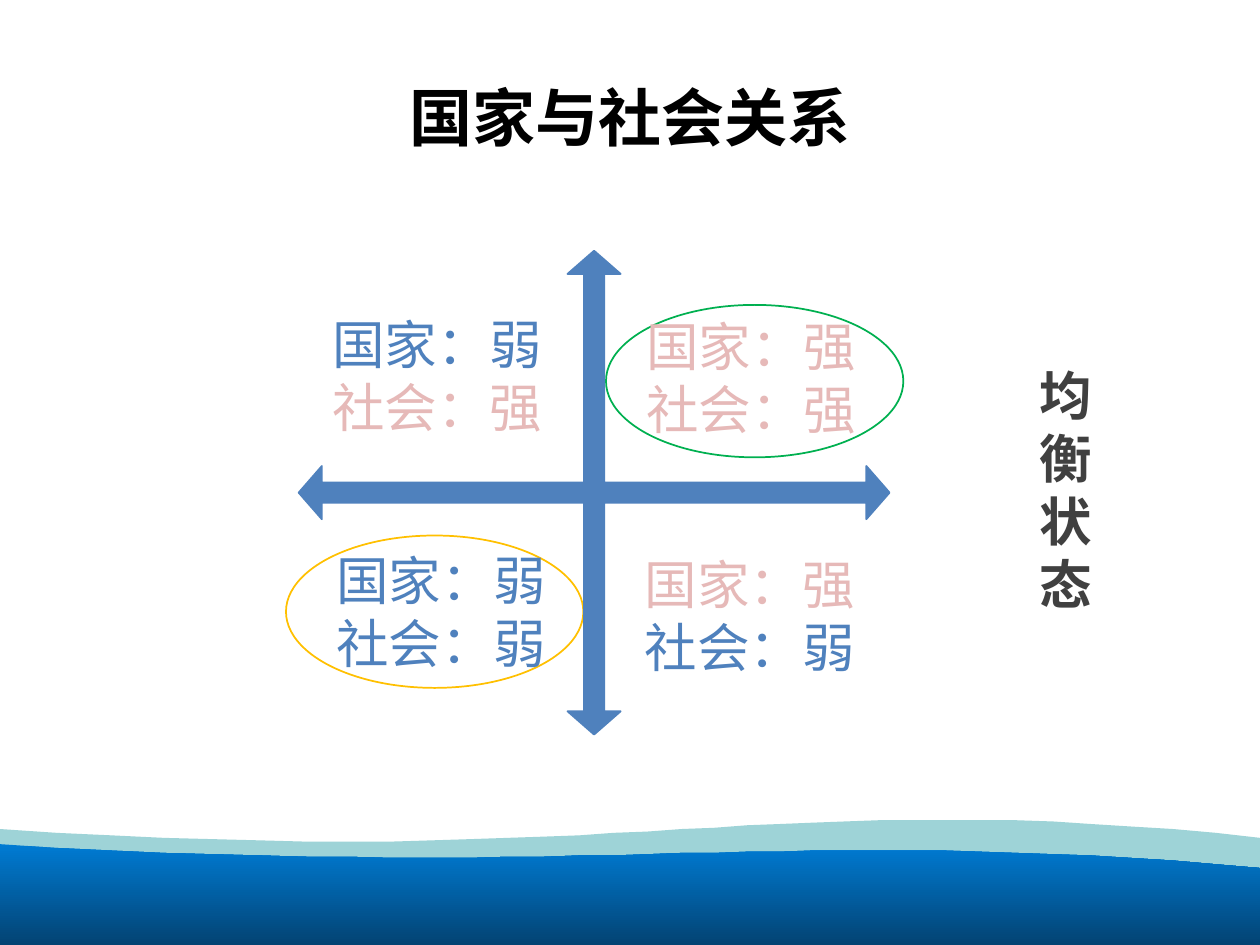
from lxml.etree import SubElement
from pptx import Presentation
from pptx.dml.color import RGBColor
from pptx.enum.shapes import MSO_SHAPE as Preset
from pptx.enum.text import MSO_ANCHOR as Anchor, PP_ALIGN as Align
from pptx.oxml.ns import qn
from pptx.util import Inches, Pt

FONT = "Noto Sans CJK SC"
COLORS = {
    "black": "000000", "white": "FFFFFF", "grey": "404040",
    "weak": "4F81BD", "strong": "E6B9B8",
    "green": "00B050", "amber": "FFC000",
    "wave": "9ED3D7", "sea_top": "007BD3", "sea_bottom": "034373",
}

TITLE = "国家与社会关系"
SIDE_LABEL = "均衡状态"
ACTORS = ("国家", "社会")
LEVELS = {"弱": "weak", "强": "strong"}
QUADRANTS = [  # left, top, level of each actor
    (5.02, 4.33, "强弱"),
    (5.03, 2.44, "强强"),
    (2.57, 4.30, "弱弱"),
    (2.54, 2.43, "弱强"),
]
ELLIPSES = [(4.81, 2.42, "green"), (2.27, 4.25, "amber")]
ARROW_ADJUSTMENTS = (0.042, 0.055, 0.048)

WAVE_X = [0, 0.45, 0.88, 1.3, 1.69, 2.07, 2.43, 2.77, 3.1, 3.42, 3.73,
          4.03, 4.32, 4.6, 4.87, 5.14, 5.41, 5.67, 5.93, 6.19, 6.44, 6.7,
          6.97, 7.23, 7.5, 7.78, 8.07, 8.36, 8.66, 8.98, 9.31, 9.65, 10]
BACK_WAVE_Y = [6.58, 6.61, 6.63, 6.65, 6.66, 6.67, 6.68, 6.68, 6.68, 6.67, 6.66,
               6.65, 6.64, 6.63, 6.61, 6.6, 6.58, 6.57, 6.55, 6.54, 6.53, 6.52,
               6.51, 6.51, 6.51, 6.51, 6.51, 6.52, 6.54, 6.56, 6.58, 6.61, 6.65]
FRONT_WAVE_Y = [6.7, 6.73, 6.75, 6.77, 6.78, 6.79, 6.8, 6.8, 6.81, 6.81, 6.81,
                6.8, 6.8, 6.79, 6.79, 6.78, 6.77, 6.77, 6.76, 6.76, 6.75, 6.75,
                6.75, 6.75, 6.75, 6.76, 6.77, 6.78, 6.79, 6.81, 6.83, 6.86, 6.89]


def rgb(name):
    return RGBColor.from_string(COLORS[name])


def add_wave(slide, crest, bottom):
    points = list(zip(WAVE_X, crest)) + [(WAVE_X[-1], bottom), (0, bottom)]
    (start_x, start_y), *rest = [(Inches(x), Inches(y)) for x, y in points]
    builder = slide.shapes.build_freeform(start_x, start_y)
    builder.add_line_segments(rest, close=True)
    shape = builder.convert_to_shape()
    shape.shadow.inherit = False
    shape.line.fill.background()
    return shape


def add_preset(slide, preset, box, fill, line):
    shape = slide.shapes.add_shape(preset, *map(Inches, box))
    shape.shadow.inherit = False
    shape.fill.solid()
    shape.fill.fore_color.rgb = rgb(fill)
    shape.line.color.rgb = rgb(line)
    shape.line.width = Pt(1)
    return shape


def add_text(slide, box, lines, size, bold=False, wrap=True):
    """Add a text box; lines holds (text, colour name) pairs."""
    frame = slide.shapes.add_textbox(*map(Inches, box)).text_frame
    frame.word_wrap = wrap
    for index, (text, color) in enumerate(lines):
        paragraph = frame.add_paragraph() if index else frame.paragraphs[0]
        paragraph.text = text
        font = paragraph.font
        font.size, font.bold, font.name = Pt(size), bold, FONT
        font.color.rgb = rgb(color)
        SubElement(font._rPr, qn("a:ea"), typeface=FONT)
    return frame


def main():
    presentation = Presentation()
    presentation.slide_width, presentation.slide_height = Inches(10), Inches(7.5)
    slide = presentation.slides.add_slide(presentation.slide_layouts[6])

    back_wave = add_wave(slide, BACK_WAVE_Y, 7.4)
    back_wave.fill.solid()
    back_wave.fill.fore_color.rgb = rgb("wave")

    sea = add_wave(slide, FRONT_WAVE_Y, 7.5)
    sea.fill.gradient()
    sea.fill.gradient_angle = 270
    for stop, color in zip(sea.fill.gradient_stops, ("sea_top", "sea_bottom")):
        stop.color.rgb = rgb(color)

    for left, top, color in ELLIPSES:
        add_preset(slide, Preset.OVAL, (left, top, 2.36, 1.21), "white", color)

    title = add_text(slide, (0.5, 0.3, 9, 1.25), [(TITLE, "black")], 36, bold=True)
    title.vertical_anchor = Anchor.MIDDLE
    title.paragraphs[0].alignment = Align.CENTER

    axes = add_preset(slide, Preset.QUAD_ARROW, (2.37, 1.99, 4.69, 3.84), "weak", "weak")
    for index, value in enumerate(ARROW_ADJUSTMENTS):
        axes.adjustments[index] = value

    for left, top, levels in QUADRANTS:
        lines = [(f"{actor}：{level}", LEVELS[level])
                 for actor, level in zip(ACTORS, levels)]
        add_text(slide, (left, top, 1.87, 1.11), lines, 30, wrap=False)

    add_text(slide, (8.15, 2.83, 0.45, 2.12), [(SIDE_LABEL, "grey")], 30, bold=True)

    presentation.save("out.pptx")


if __name__ == "__main__":
    main()
